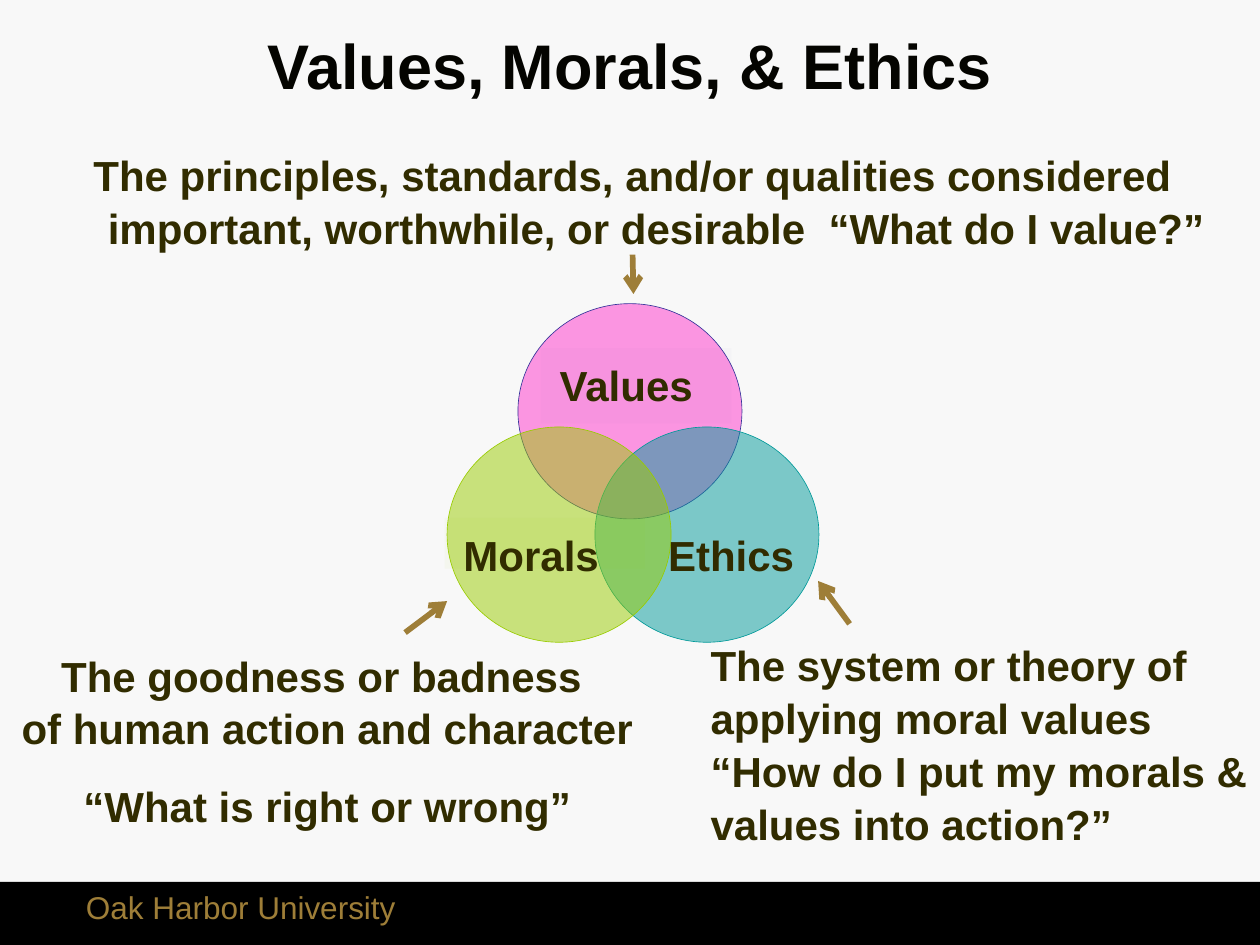
from lxml import etree
from pptx import Presentation
from pptx.dml.color import RGBColor
from pptx.enum.shapes import MSO_CONNECTOR, MSO_SHAPE
from pptx.enum.text import MSO_ANCHOR, PP_ALIGN
from pptx.oxml.ns import qn
from pptx.util import Pt

OVAL, RECT = MSO_SHAPE.OVAL, MSO_SHAPE.RECTANGLE
STRAIGHT = MSO_CONNECTOR.STRAIGHT
LEFT, CENTER = PP_ALIGN.LEFT, PP_ALIGN.CENTER
TOP, MIDDLE = MSO_ANCHOR.TOP, MSO_ANCHOR.MIDDLE

THEME = {
    "font": "Arial",
    "bg": "F8F8F8", "band": "000000", "title": "040400", "text": "312C00",
    "gold": "9E7E38", "pink": "FF33CC", "navy": "333399",
    "teal": "009999", "lime": "99CC00",
    "title_size": 36, "body_size": 24, "footer_size": 18,
}


def write(shape, lines, size="body_size", color="text", bold=True, align=LEFT, spacing=1.05):
    tf = shape.text_frame
    tf.vertical_anchor = TOP
    for i, line in enumerate(lines):
        p = tf.add_paragraph() if i else tf.paragraphs[0]
        p.alignment = align
        p.line_spacing = spacing
        r = p.add_run()
        r.text = line
        r.font.name = THEME["font"]
        r.font.size = Pt(THEME[size])
        r.font.bold = bold
        r.font.color.rgb = RGBColor.from_string(THEME[color])
    return tf


def add_filled(shapes, kind, box, color, line=None, alpha=100):
    sp = shapes.add_shape(kind, *map(Pt, box))
    sp.shadow.inherit = False
    sp.fill.solid()
    sp.fill.fore_color.rgb = RGBColor.from_string(THEME[color])
    if alpha < 100:
        clr = sp._element.spPr.find(qn("a:solidFill")).find(qn("a:srgbClr"))
        etree.SubElement(clr, qn("a:alpha"), val=str(alpha * 1000))
    if line:
        sp.line.color.rgb = RGBColor.from_string(THEME[line])
        sp.line.width = Pt(0.37)
    else:
        sp.line.fill.background()
    return sp


prs = Presentation()
prs.slide_width, prs.slide_height = Pt(720), Pt(540)
s = prs.slides.add_slide(prs.slide_layouts[5])
s.background.fill.solid()
s.background.fill.fore_color.rgb = RGBColor.from_string(THEME["bg"])

# Footer band
add_filled(s.shapes, RECT, (0, 504, 720, 36), "band", "band")
footer = s.shapes.add_textbox(Pt(42), Pt(504), Pt(317.5), Pt(29))
write(footer, ["Oak Harbor University"], "footer_size", "gold", False, spacing=1)
footer.text_frame.word_wrap = True

# Title
title = s.shapes.title
title.left, title.top, title.width, title.height = Pt(1.5), Pt(0.5), Pt(717), Pt(72)
write(title, ["Values, Morals, & Ethics"], "title_size", "title", align=CENTER, spacing=1)
title.text_frame.vertical_anchor = MIDDLE

# Venn circles
venn = s.shapes.add_group_shape()
for x, y, color, line in [
    (296, 173.5, "pink", "navy"),
    (340, 244, "teal", "teal"),
    (255.5, 244, "lime", "lime"),
]:
    add_filled(venn.shapes, OVAL, (x, y, 128, 123), color, line, 50)

# Circle labels, two of them on a faint tint
for name, box, tint, alpha in [
    ("Values", (309, 199, 109, 43), "navy", 2),
    ("Morals", (254, 296, 114.5, 29), "lime", 4),
    ("Ethics", (371, 296, 102, 29), None, 0),
]:
    if tint:
        label = add_filled(venn.shapes, RECT, box, tint, alpha=alpha)
    else:
        label = venn.shapes.add_textbox(*map(Pt, box))
    tf = write(label, [name])
    tf.word_wrap = False
    tf.margin_left = tf.margin_right = Pt(10.8)
    tf.margin_top = tf.margin_bottom = Pt(5)

# Definitions
for box, lines, align, wrap in [
    ((3.5, 366.5, 367, 109),
     ["The goodness or badness ", "of human action and character", "“What is right or wrong”"],
     CENTER, False),
    ((399, 360.5, 338.5, 147.5),
     ["The system or theory of applying moral values",
      "“How do I put my morals & values into action?”"],
     LEFT, True),
    ((3, 80.5, 717, 65.5),
     ["The principles, standards, and/or qualities considered important, "
      "worthwhile, or desirable  “What do I value?”"],
     CENTER, True),
]:
    tf = write(s.shapes.add_textbox(*map(Pt, box)), lines, align=align)
    tf.word_wrap = wrap
    if not wrap:
        tf.paragraphs[-1].space_before = Pt(14)
    elif align == CENTER:
        # Hanging indent
        pPr = tf.paragraphs[0]._p.get_or_add_pPr()
        pPr.set("marL", str(Pt(27)))
        pPr.set("indent", str(-Pt(27)))

# Arrows from definitions to circles
for ends in [
    (361.5, 145.5, 362, 168),
    (231.5, 361.5, 255.5, 343.5),
    (485.5, 356.5, 467.5, 332),
]:
    arrow = s.shapes.add_connector(STRAIGHT, *map(Pt, ends))
    arrow.line.color.rgb = RGBColor.from_string(THEME["gold"])
    arrow.line.width = Pt(3.25)
    etree.SubElement(arrow.line._get_or_add_ln(), qn("a:tailEnd"), type="arrow")
    etree.SubElement(arrow._element.spPr, qn("a:effectLst"))

prs.save("out.pptx")
